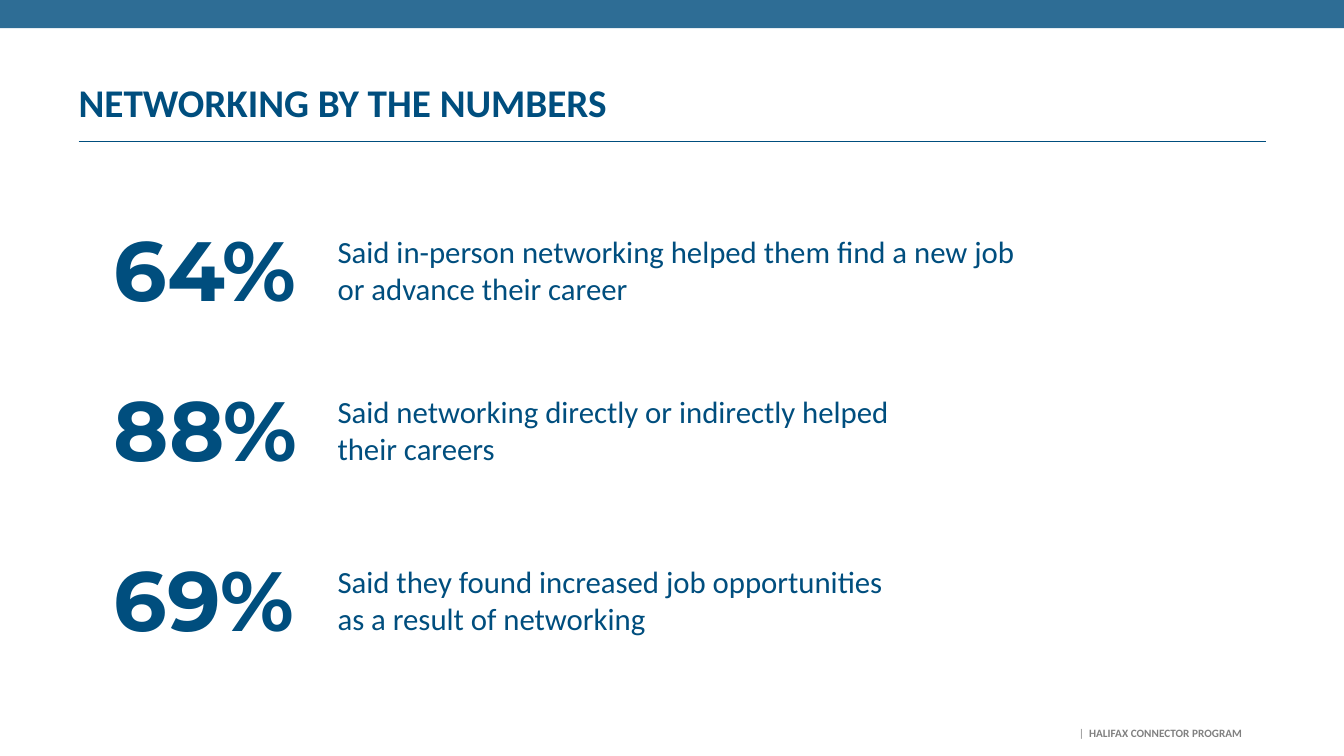
from lxml import etree
from pptx import Presentation
from pptx.dml.color import RGBColor
from pptx.enum.shapes import MSO_CONNECTOR, MSO_SHAPE
from pptx.enum.text import PP_ALIGN
from pptx.oxml.ns import qn
from pptx.util import Inches, Pt

STRAIGHT = MSO_CONNECTOR.STRAIGHT
RECTANGLE = MSO_SHAPE.RECTANGLE
LEFT, RIGHT = PP_ALIGN.LEFT, PP_ALIGN.RIGHT

COLORS = {"navy": "004E7E", "gray": "808080"}
BODY_FONT = "Calibri"
NUMBER_FONT = "Montserrat"

STATISTICS = [
    (2.11, "64%", ["Said in-person networking helped them find a new job",
                   "or advance their career"]),
    (3.7, "88%", ["Said networking directly or indirectly helped",
                  "their careers"]),
    (5.38, "69%", ["Said they found increased job opportunities",
                   "as a result of networking"]),
]


def color(name):
    return RGBColor.from_string(COLORS[name])


def style_run(run, size, font, color_name, bold):
    run.font.size = Pt(size)
    run.font.name = font
    run.font.color.rgb = color(color_name)
    run.font.bold = bold


def add_text(slide, lines, left, top, width, height, *, size, font=BODY_FONT,
             color_name="navy", bold=False, align=LEFT, inset=None, spacing=None):
    frame = slide.shapes.add_textbox(
        Inches(left), Inches(top), Inches(width), Inches(height)).text_frame
    frame.word_wrap = True
    if inset is not None:
        frame.margin_left = frame.margin_right = Inches(inset)
        frame.margin_top = frame.margin_bottom = Inches(inset)
    for index, line in enumerate(lines):
        paragraph = frame.add_paragraph() if index else frame.paragraphs[0]
        paragraph.alignment = align
        paragraph.line_spacing = spacing
        run = paragraph.add_run()
        run.text = line
        style_run(run, size, font, color_name, bold)
    return frame


def add_top_bar(slide, width):
    bar = slide.shapes.add_shape(RECTANGLE, 0, 0, width, Inches(0.28))
    bar.shadow.inherit = False
    bar.fill.solid()
    bar.fill.fore_color.rgb = color("navy")
    bar.line.fill.background()
    fill_color = bar.fill._xPr.find(qn("a:solidFill"))[0]
    etree.SubElement(fill_color, qn("a:alpha")).set("val", "82000")


def add_rule(slide, left, right, top):
    rule = slide.shapes.add_connector(
        STRAIGHT, Inches(left), Inches(top), Inches(right), Inches(top))
    rule.line.color.rgb = color("navy")
    rule.line.width = Pt(0.5)
    etree.SubElement(rule._element.spPr, qn("a:effectLst"))


def add_statistic(slide, top, number, description):
    add_text(slide, description, 3.25, top + 0.15, 9.8, 0.84, size=22)
    add_text(slide, [number], 1.03, top, 2.22, 0.83,
             size=60, font=NUMBER_FONT, bold=True)


def add_footer(slide):
    frame = add_text(slide, ["|  "], 9.42, 7.16, 3, 0.27,
                     size=8, color_name="gray", align=RIGHT)
    run = frame.paragraphs[0].add_run()
    run.text = "HALIFAX CONNECTOR PROGRAM"
    style_run(run, 8, BODY_FONT, "gray", True)


def main():
    presentation = Presentation()
    presentation.slide_width = Inches(13.33)
    presentation.slide_height = Inches(7.5)
    slide = presentation.slides.add_slide(presentation.slide_layouts[6])
    add_footer(slide)
    add_text(slide, ["NETWORKING BY THE NUMBERS"], 0.78, 0.83, 11.32, 0.34,
             size=28, bold=True, inset=0, spacing=0.9)
    add_rule(slide, 0.78, 12.56, 1.4)
    add_top_bar(slide, presentation.slide_width)
    for top, number, description in STATISTICS:
        add_statistic(slide, top, number, description)
    presentation.save("out.pptx")


if __name__ == "__main__":
    main()
